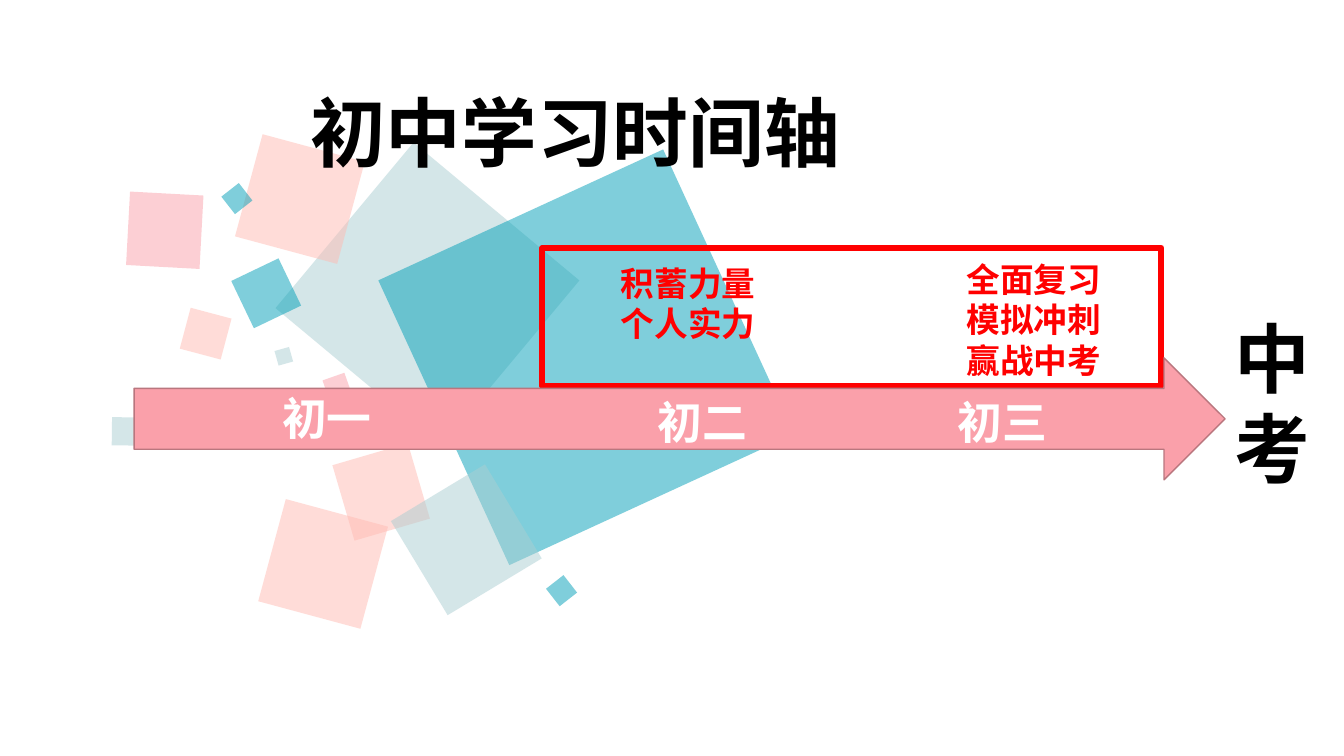
from dataclasses import dataclass

from lxml import etree
from pptx import Presentation
from pptx.dml.color import RGBColor
from pptx.enum.shapes import MSO_SHAPE
from pptx.enum.text import MSO_ANCHOR, MSO_AUTO_SIZE, PP_ALIGN
from pptx.oxml.ns import qn
from pptx.util import Pt

RECTANGLE = MSO_SHAPE.RECTANGLE
RIGHT_ARROW = MSO_SHAPE.RIGHT_ARROW
TOP = MSO_ANCHOR.TOP
LEFT = PP_ALIGN.LEFT
GROW = MSO_AUTO_SIZE.SHAPE_TO_FIT_TEXT

EMU_PER_PX = 9144
SLIDE_WIDTH, SLIDE_HEIGHT = 1333, 750
BLANK_LAYOUT = 6


@dataclass(frozen=True)
class Theme:
    font: str = "Quicksand"
    black: str = "000000"
    white: str = "FFFFFF"
    red: str = "FF0000"
    pink: str = "FAA0AA"
    pink_edge: str = "B9767E"
    peach: str = "FFBBB3"
    mist: str = "AACED2"
    teal: str = "009FB8"
    tile_opacity: int = 50
    title_size: int = 54
    grade_size: int = 32
    goal_size: int = 24


THEME = Theme()

TILES = [
    (339, 449, 78, 163.7, THEME.peach),
    (317, 185, 214, 309.8, THEME.mist),
    (274, 346, 15, 74.2, THEME.mist),
    (183, 310, 42, 14.9, THEME.peach),
    (323, 373, 23, 70.7, THEME.pink),
    (238, 265, 52, 64.4, THEME.teal),
    (127, 192, 73, 3.1, THEME.pink),
    (245, 145, 105, 15.1, THEME.peach),
    (224, 186, 22, 322, THEME.teal),
    (111, 414, 28, 0.7, THEME.mist),
    (426, 199, 311, 335.3, THEME.teal),
    (268, 507, 105, 15.1, THEME.peach),
    (546, 575, 22, 322, THEME.teal),
    (408, 481, 109, 328.9, THEME.mist),
]

GRADES = [("初一", 270, 383), ("初二", 642, 387), ("初三", 940, 387)]

GOALS = [
    (["积蓄力量", "个人实力"], (606, 256, 202, 131)),
    (["全面复习", "模拟冲刺", "赢战中考"], (949, 252, 202, 172)),
]


def px(*lengths):
    return [length * EMU_PER_PX for length in lengths]


def set_attributes(target, values):
    for name, value in values.items():
        setattr(target, name, value)


def add_figure(slide, kind, frame, fill=None, line=None, line_width=0):
    shape = slide.shapes.add_shape(kind, *px(*frame))
    shape.shadow.inherit = False
    if fill:
        shape.fill.solid()
        shape.fill.fore_color.rgb = RGBColor.from_string(fill)
    else:
        shape.fill.background()
    if line:
        shape.line.color.rgb = RGBColor.from_string(line)
        shape.line.width = Pt(line_width)
    else:
        shape.line.fill.background()
    return shape


def add_tile(slide, left, top, side, rotation, color):
    tile = add_figure(slide, RECTANGLE, (left, top, side, side), color)
    tile.rotation = rotation
    color_element = tile.fill._xPr.find(qn("a:solidFill"))[0]
    alpha = etree.SubElement(color_element, qn("a:alpha"))
    alpha.set("val", str(THEME.tile_opacity * 1000))


def add_text(slide, lines, frame, size, color):
    text_frame = slide.shapes.add_textbox(*px(*frame)).text_frame
    set_attributes(text_frame, {
        "word_wrap": True, "auto_size": GROW, "vertical_anchor": TOP,
    })
    text_frame.text = "\n".join(lines)
    for paragraph in text_frame.paragraphs:
        paragraph.alignment = LEFT
        for run in paragraph.runs:
            set_attributes(run.font, {
                "name": THEME.font, "size": Pt(size), "bold": True,
            })
            run.font.color.rgb = RGBColor.from_string(color)
            east_asian = etree.SubElement(run.font._element, qn("a:ea"))
            east_asian.set("typeface", THEME.font)


def main():
    presentation = Presentation()
    width, height = px(SLIDE_WIDTH, SLIDE_HEIGHT)
    set_attributes(presentation, {"slide_width": width, "slide_height": height})
    slide = presentation.slides.add_slide(presentation.slide_layouts[BLANK_LAYOUT])

    for tile in TILES:
        add_tile(slide, *tile)

    add_text(slide, ["初中学习时间轴"], (298, 80, 752, 101),
             THEME.title_size, THEME.black)
    add_figure(slide, RECTANGLE, (538, 246, 614, 137),
               line=THEME.red, line_width=4.25)
    add_figure(slide, RIGHT_ARROW, (133, 355, 1082, 121),
               THEME.pink, THEME.pink_edge, 1)

    for grade, left, top in GRADES:
        add_text(slide, [grade], (left, top, 184, 64),
                 THEME.grade_size, THEME.white)
    add_text(slide, ["中", "考"], (1215, 304, 103, 192),
             THEME.title_size, THEME.black)
    for lines, frame in GOALS:
        add_text(slide, lines, frame, THEME.goal_size, THEME.red)

    presentation.save("out.pptx")


if __name__ == "__main__":
    main()
